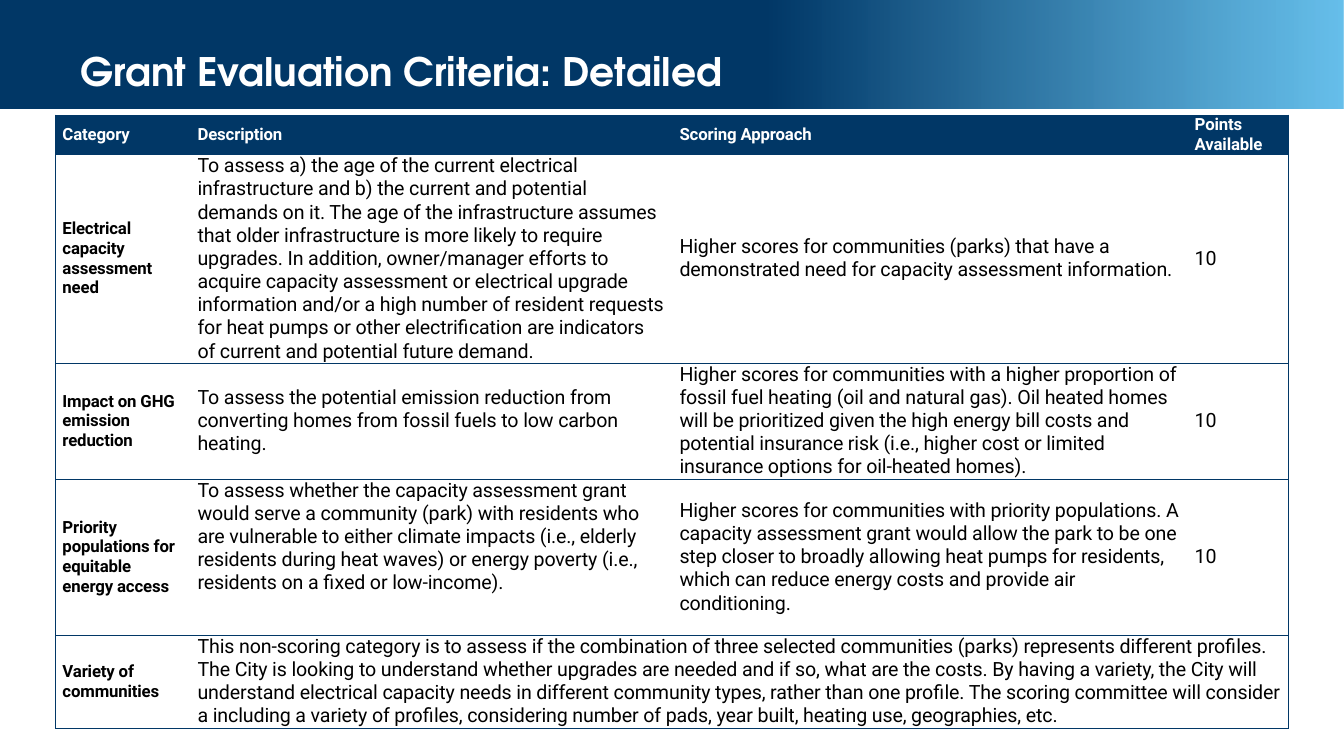
from lxml import etree
from pptx import Presentation
from pptx import util as u
from pptx.dml.color import RGBColor
from pptx.enum import shapes, text
from pptx.oxml.ns import qn

COLORS = {"navy": "013766", "sky": "57B9E9", "white": "FFFFFF", "black": "000000"}
FORMATS = {
    "title": {"name": "TeX Gyre Adventor", "size": u.Pt(28), "bold": True},
    "label": {"name": "Roboto", "size": u.Pt(12), "bold": True},
    "body": {"name": "Roboto", "size": u.Pt(14), "bold": False},
}
COLUMN_WIDTHS = [1.34, 4.78, 5.11, 1]
ROW_HEIGHTS = [0.39, 2.07, 1.15, 1.55, 0.92]
CRITERIA = [
    ["Category", "Description", "Scoring Approach", "Points Available"],
    ["Electrical capacity assessment need",
     "To assess a) the age of the current electrical infrastructure and b) the current and "
     "potential demands on it. The age of the infrastructure assumes that older infrastructure "
     "is more likely to require upgrades. In addition, owner/manager efforts to acquire capacity "
     "assessment or electrical upgrade information and/or a high number of resident requests for "
     "heat pumps or other electrification are indicators of current and potential future demand.",
     "Higher scores for communities (parks) that have a demonstrated need for capacity "
     "assessment information.",
     "10"],
    ["Impact on GHG emission reduction",
     "To assess the potential emission reduction from converting homes from fossil fuels to low "
     "carbon heating.",
     "Higher scores for communities with a higher proportion of fossil fuel heating (oil and "
     "natural gas). Oil heated homes will be prioritized given the high energy bill costs and "
     "potential insurance risk (i.e., higher cost or limited insurance options for oil-heated "
     "homes).",
     "10"],
    ["Priority populations for equitable energy access",
     "To assess whether the capacity assessment grant would serve a community (park) with "
     "residents who are vulnerable to either climate impacts (i.e., elderly residents during "
     "heat waves) or energy poverty (i.e., residents on a fixed or low-income).",
     "Higher scores for communities with priority populations. A capacity assessment grant would "
     "allow the park to be one step closer to broadly allowing heat pumps for residents, which "
     "can reduce energy costs and provide air conditioning.",
     "10"],
    ["Variety of communities",
     "This non-scoring category is to assess if the combination of three selected communities "
     "(parks) represents different profiles. The City is looking to understand whether upgrades "
     "are needed and if so, what are the costs. By having a variety, the City will understand "
     "electrical capacity needs in different community types, rather than one profile. The "
     "scoring committee will consider a including a variety of profiles, considering number of "
     "pads, year built, heating use, geographies, etc."],
]


class Deck:
    def __init__(self):
        self.prs = Presentation()
        self.prs.slide_width = u.Inches(13.33)
        self.prs.slide_height = u.Inches(7.5)
        self.s = self.prs.slides.add_slide(self.prs.slide_layouts[6])

    def color(self, name):
        return RGBColor.from_string(COLORS[name])

    def run(self, p, words, style, color):
        r = p.add_run()
        r.text = words
        for key, value in FORMATS[style].items():
            setattr(r.font, key, value)
        r.font.color.rgb = self.color(color)
        return r

    def banner(self, x, y, w, h):
        sp = self.s.shapes.add_shape(shapes.MSO_SHAPE.RECTANGLE, *map(u.Inches, (x, y, w, h)))
        sp.shadow.inherit = False
        sp.line.fill.background()
        sp.fill.gradient()
        sp.fill.gradient_angle = 0
        for stop, name, position in zip(sp.fill.gradient_stops, ("navy", "sky"), (0.57, 1)):
            stop.color.rgb = self.color(name)
            stop.position = position
        for clr in sp._element.iter(qn("a:srgbClr")):
            if clr.get("val") == COLORS["sky"]:
                etree.SubElement(clr, qn("a:alpha"), val="90000")

    def title(self, words, x, y, w, h):
        tf = self.s.shapes.add_textbox(*map(u.Inches, (x, y, w, h))).text_frame
        settings = {"word_wrap": True, "vertical_anchor": text.MSO_ANCHOR.MIDDLE,
                    "margin_left": 0, "margin_right": 0,
                    "margin_top": u.Inches(0.08), "margin_bottom": u.Inches(0.08)}
        for key, value in settings.items():
            setattr(tf, key, value)
        p = tf.paragraphs[0]
        p.line_spacing = 0.9
        self.run(p, words, "title", "white")

    def borders(self, cell, sides):
        tcPr = cell._tc.get_or_add_tcPr()
        for side in "LRTB":
            ln = etree.SubElement(tcPr, qn("a:ln" + side), w=str(u.Pt(0.5)))
            if side in sides:
                fill = etree.SubElement(ln, qn("a:solidFill"))
                etree.SubElement(fill, qn("a:srgbClr"), val=COLORS["navy"])
            else:
                etree.SubElement(ln, qn("a:noFill"))

    def cell(self, cell, words, header, label):
        settings = {"vertical_anchor": text.MSO_ANCHOR.MIDDLE,
                    "margin_left": u.Inches(0.07), "margin_right": u.Inches(0.07),
                    "margin_top": 0, "margin_bottom": 0}
        for key, value in settings.items():
            setattr(cell, key, value)
        if header:
            cell.fill.solid()
            cell.fill.fore_color.rgb = self.color("navy")
        else:
            cell.fill.background()
        if words:
            r = self.run(cell.text_frame.paragraphs[0], words,
                         "label" if header or label else "body",
                         "white" if header else "black")
            r.font._element.set("spc", "-10")

    def table(self, rows, x, y, widths, heights):
        size = (x, y, sum(widths), sum(heights))
        tbl = self.s.shapes.add_table(len(rows), len(widths), *map(u.Inches, size)).table
        tbl.first_row = tbl.horz_banding = False
        for column, width in zip(tbl.columns, widths):
            column.width = u.Inches(width)
        for row, height in zip(tbl.rows, heights):
            row.height = u.Inches(height)
        last = len(widths) - 1
        for i, row in enumerate(rows):
            if len(row) <= last:
                tbl.cell(i, len(row) - 1).merge(tbl.cell(i, last))
            for j in range(len(widths)):
                words = row[j] if j < len(row) else ""
                cell = tbl.cell(i, j)
                right = j == last or cell.is_merge_origin
                self.borders(cell, "TB" + "L" * (j == 0) + "R" * right)
                self.cell(cell, words, i == 0, j == 0)
        return tbl


def main():
    deck = Deck()
    deck.banner(0, 0, 13.33, 1.08)
    tbl = deck.table(CRITERIA, 0.55, 1.14, COLUMN_WIDTHS, ROW_HEIGHTS)
    tbl.cell(3, 1).vertical_anchor = text.MSO_ANCHOR.TOP
    deck.title("Grant Evaluation Criteria: Detailed", 0.8, 0.41, 10.04, 0.65)
    deck.prs.save("out.pptx")


if __name__ == "__main__":
    main()
